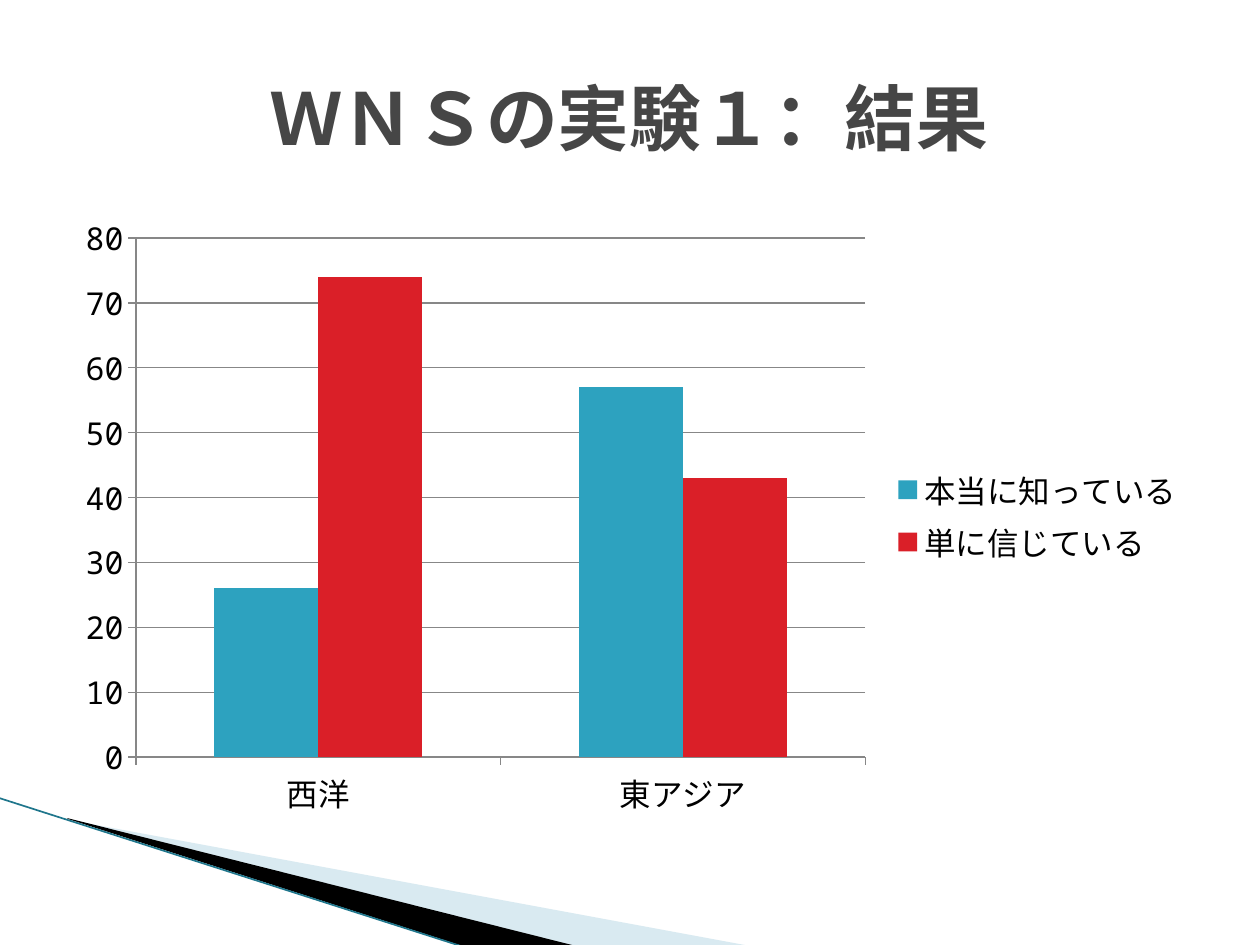
import pptx
import pptx.chart.data
import pptx.dml.color
import pptx.enum.chart
import pptx.enum.shapes
import pptx.enum.text
import pptx.oxml
import pptx.oxml.ns
import pptx.util

EMU_PER_PX = 914400 // 126
TITLE = "ＷＮＳの実験１：結果"
TITLE_FONT = "Noto Sans CJK JP"
CHART_FONT = "Noto Sans Mono"
CATEGORIES = ["西洋", "東アジア"]
SERIES = [
    ("本当に知っている", [26, 57], "2DA2BF"),
    ("単に信じている", [74, 43], "DA1F28"),
]
TITLE_BOX = (63, 38, 1134, 158)
CHART_BOX = (63, 204, 1134, 624)
# corner points, fill, opacity in percent
WEDGES = [
    ([(69, 820), (750, 946), (575, 946), (69, 819)], "A0CBDC", 40),
    ([(67, 818), (576, 946), (469, 948), (68, 819)], "000000", 100),
]
EDGE = (-1, 798, 467, 948)
EDGE_COLOR = "1F768C"
GRID_COLOR = "878787"


def px(*lengths):
    return [pptx.util.Emu(length * EMU_PER_PX) for length in lengths]


def rgb(value):
    return pptx.dml.color.RGBColor.from_string(value)


def add_wedge(page, points, color, opacity):
    builder = page.shapes.build_freeform(*points[0], scale=EMU_PER_PX)
    builder.add_line_segments(points[1:], close=True)
    wedge = builder.convert_to_shape()
    wedge.shadow.inherit = False
    wedge.fill.solid()
    wedge.fill.fore_color.rgb = rgb(color)
    wedge.line.fill.background()
    if opacity < 100:
        fill_color = wedge.fill._xPr.find(".//" + pptx.oxml.ns.qn("a:srgbClr"))
        alpha = pptx.oxml.parse_xml(
            f'<a:alpha {pptx.oxml.ns.nsdecls("a")} val="{opacity * 1000}"/>')
        fill_color.append(alpha)


def add_edge(page):
    edge = page.shapes.add_connector(
        pptx.enum.shapes.MSO_CONNECTOR.STRAIGHT, *px(*EDGE))
    edge.line.color.rgb = rgb(EDGE_COLOR)
    edge.line.width = pptx.util.Pt(0.95)
    edge._element.spPr.append(pptx.oxml.parse_xml(
        f'<a:effectLst {pptx.oxml.ns.nsdecls("a")}/>'))


def fill_title(page):
    box = page.shapes.title
    box.left, box.top, box.width, box.height = px(*TITLE_BOX)
    frame = box.text_frame
    frame.vertical_anchor = pptx.enum.text.MSO_ANCHOR.MIDDLE
    para = frame.paragraphs[0]
    para.alignment = pptx.enum.text.PP_ALIGN.CENTER
    span = para.add_run()
    span.text = TITLE
    span.font.size = pptx.util.Pt(41)
    span.font.bold = True
    span.font.color.rgb = rgb("464646")
    span.font.name = TITLE_FONT
    span.font._element.append(pptx.oxml.parse_xml(
        f'<a:ea {pptx.oxml.ns.nsdecls("a")} typeface="{TITLE_FONT}"/>'))


def add_results_chart(page):
    data = pptx.chart.data.CategoryChartData()
    data.categories = CATEGORIES
    for name, values, _ in SERIES:
        data.add_series(name, values)
    chart = page.shapes.add_chart(
        pptx.enum.chart.XL_CHART_TYPE.COLUMN_CLUSTERED, *px(*CHART_BOX), data).chart
    chart.has_title = False
    chart.font.size = pptx.util.Pt(18)
    chart.font.name = CHART_FONT
    chart.font.color.rgb = rgb("000000")

    chart.has_legend = True
    chart.legend.position = pptx.enum.chart.XL_LEGEND_POSITION.RIGHT
    chart.legend.include_in_layout = False

    plot = chart.plots[0]
    plot.gap_width = 150
    plot.overlap = 0
    plot.vary_by_categories = False
    for series, (_, _, color) in zip(plot.series, SERIES):
        series.format.fill.solid()
        series.format.fill.fore_color.rgb = rgb(color)

    scale = chart.value_axis
    scale.minimum_scale, scale.maximum_scale, scale.major_unit = 0, 80, 10
    scale.has_major_gridlines = True
    scale.major_gridlines.format.line.color.rgb = rgb(GRID_COLOR)
    for axis in (chart.category_axis, scale):
        axis.major_tick_mark = pptx.enum.chart.XL_TICK_MARK.OUTSIDE
        axis.format.line.color.rgb = rgb(GRID_COLOR)


def main():
    deck = pptx.Presentation()
    deck.slide_width = pptx.util.Inches(10)
    deck.slide_height = pptx.util.Inches(7.5)
    page = deck.slides.add_slide(deck.slide_layouts[5])
    for points, color, opacity in WEDGES:
        add_wedge(page, points, color, opacity)
    add_edge(page)
    add_results_chart(page)
    fill_title(page)
    deck.save("out.pptx")


if __name__ == "__main__":
    main()
